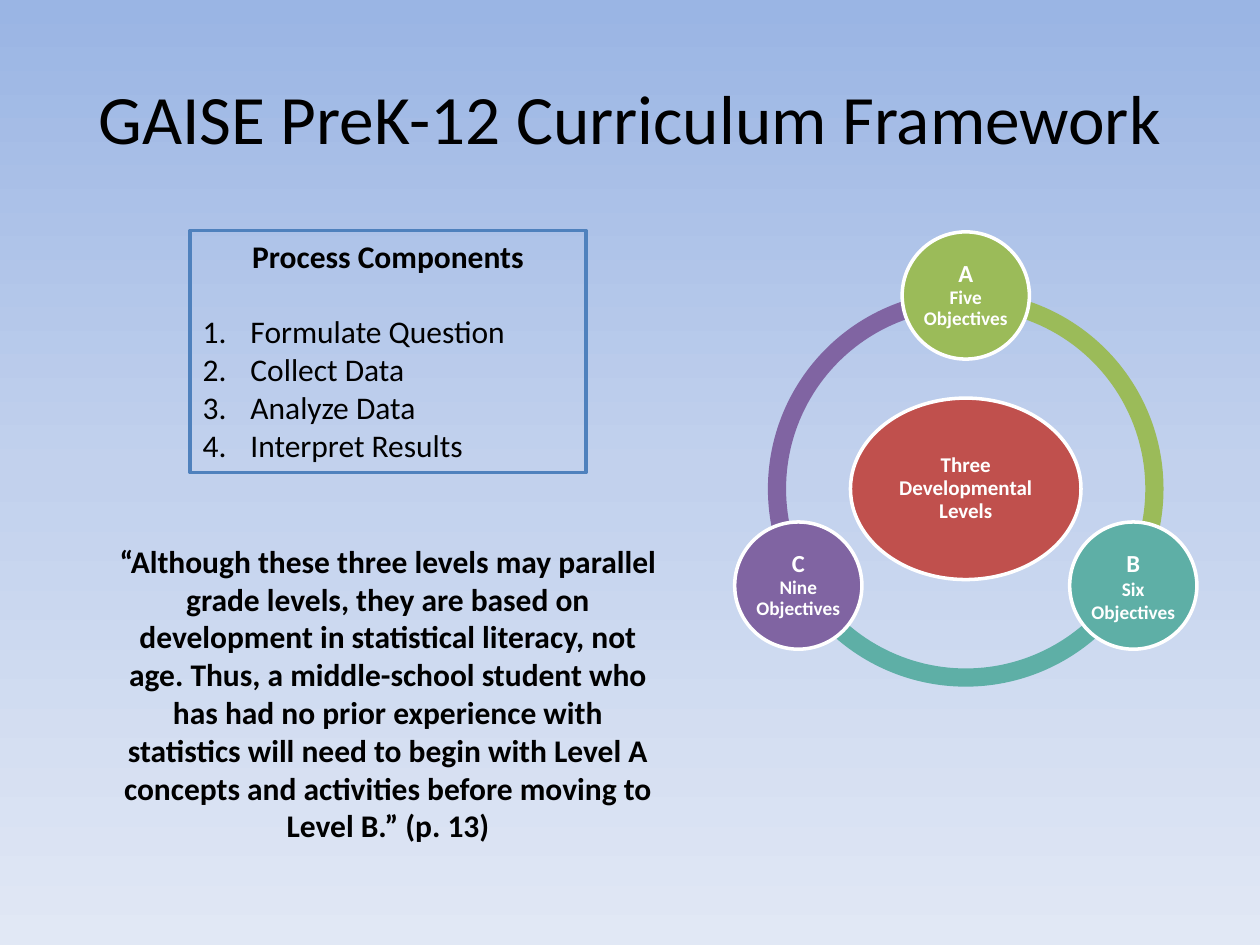
from copy import deepcopy
from math import cos, radians, sin

from lxml import etree
from pptx import Presentation
from pptx.dml.color import RGBColor
from pptx.enum.shapes import MSO_SHAPE
from pptx.enum.text import MSO_ANCHOR, PP_ALIGN
from pptx.oxml.ns import qn
from pptx.util import Inches, Pt

RECT, OVAL, ARC = MSO_SHAPE.RECTANGLE, MSO_SHAPE.OVAL, MSO_SHAPE.BLOCK_ARC
CENTER, LEFT = PP_ALIGN.CENTER, PP_ALIGN.LEFT
TOP, MIDDLE = MSO_ANCHOR.TOP, MSO_ANCHOR.MIDDLE

BLACK, WHITE, BLUE, RED = "000000", "FFFFFF", "4F81BD", "C0504D"
BACKGROUND = [(0, "9AB5E4"), (0.5, "C2D1ED"), (1, "E1E8F5")]
LEVELS = [
    ("A", "Five Objectives", "9BBB59", -90, 0.9),
    ("B", "Six Objectives", "5EAFA6", 30, 1),
    ("C", "Nine Objectives", "8064A2", 150, 0.9),
]
STEPS = ["Formulate Question", "Collect Data", "Analyze Data", "Interpret Results"]
QUOTE = (
    "“Although these three levels may parallel grade levels, they are based on "
    "development in statistical literacy, not age. Thus, a middle-school student "
    "who has had no prior experience with statistics will need to begin with "
    "Level A concepts and activities before moving to Level B.” (p. 13)"
)


def rgb(value):
    return RGBColor.from_string(value)


class Deck:
    font = "Calibri"
    columns, rows = 100, 75

    def __init__(self, prs):
        self.prs = prs
        self.s = prs.slides.add_slide(prs.slide_layouts[5])

    def box(self, x, y, w, h):
        col = self.prs.slide_width / self.columns
        row = self.prs.slide_height / self.rows
        return [round(n) for n in (x * col, y * row, w * col, h * row)]

    def background(self, stops):
        fill = self.s.background.fill
        fill.gradient()
        fill.gradient_angle = 270
        stop_list = self.s.element.find(".//" + qn("a:gsLst"))
        stop_list.insert(1, deepcopy(stop_list[0]))
        for stop, (position, color) in zip(fill.gradient_stops, stops):
            stop.position = position
            stop.color.rgb = rgb(color)

    def title(self, text, place, size):
        sp = self.s.shapes.title
        sp.left, sp.top, sp.width, sp.height = self.box(*place)
        sp.text_frame.vertical_anchor = MIDDLE
        self.paragraph(sp, text, size)

    def shape(self, kind, place, fill=None, line=None):
        sp = self.s.shapes.add_shape(kind, *self.box(*place))
        sp.shadow.inherit = False
        if fill:
            sp.fill.solid()
            sp.fill.fore_color.rgb = rgb(fill)
        else:
            sp.fill.background()
        if line:
            sp.line.color.rgb = rgb(line)
            sp.line.width = Pt(2)
        else:
            sp.line.fill.background()
        sp.text_frame.vertical_anchor = TOP
        return sp

    def arc(self, place, start, end, color):
        sp = self.shape(ARC, place, color)
        for i, value in enumerate((start % 360 * 0.6, end % 360 * 0.6, 0.046)):
            sp.adjustments[i] = value

    def circle(self, x, y, w, h, color):
        sp = self.shape(OVAL, (x - w / 2, y - h / 2, w, h), color, WHITE)
        tf = sp.text_frame
        tf.vertical_anchor = MIDDLE
        tf.margin_left = tf.margin_right = 0
        tf.margin_top = tf.margin_bottom = Inches(0.02)
        return sp

    def text_box(self, place):
        sp = self.s.shapes.add_textbox(*self.box(*place))
        sp.text_frame.word_wrap = True
        return sp

    def paragraph(self, sp, text, size, color=BLACK, bold=False, align=CENTER,
                  spacing=None, after=0):
        tf = sp.text_frame
        p = tf.add_paragraph() if tf.text else tf.paragraphs[0]
        p.alignment = align
        p.line_spacing = spacing
        p.space_after = Pt(after)
        r = p.add_run()
        r.text = text
        r.font.name, r.font.size, r.font.bold = self.font, Pt(size), bold
        r.font.color.rgb = rgb(color)
        return p

    def numbered(self, sp, text, size):
        properties = self.paragraph(sp, text, size, align=LEFT)._p.get_or_add_pPr()
        indent = Inches(0.38)
        properties.set("marL", str(indent))
        properties.set("indent", str(-indent))
        number = etree.SubElement(properties, qn("a:buAutoNum"))
        number.set("type", "arabicPeriod")


def main():
    prs = Presentation()
    prs.slide_width, prs.slide_height = Inches(10), Inches(7.5)
    deck = Deck(prs)
    deck.background(BACKGROUND)
    deck.title("GAISE PreK-12 Curriculum Framework", (5, 3, 90, 12.5), 39.6)

    center_x, center_y, orbit, ring = 76.65, 38.8, 15.35, 31.4
    ring_place = (center_x - ring / 2, center_y - ring / 2, ring, ring)
    for _, _, color, angle, _ in LEVELS:
        deck.arc(ring_place, angle, angle + 120, color)

    hub = deck.circle(center_x, center_y, 18.3, 14.4, RED)
    deck.paragraph(hub, "Three Developmental Levels", 12, WHITE, True, spacing=0.9)

    for letter, objectives, color, angle, spacing in LEVELS:
        x = center_x + orbit * cos(radians(angle))
        y = center_y + orbit * sin(radians(angle))
        level = deck.circle(x, y, 10.1, 10.1, color)
        deck.paragraph(level, letter, 14, WHITE, True, spacing=spacing)
        deck.paragraph(level, objectives, 11, WHITE, True, spacing=spacing)

    process = deck.shape(RECT, (15.1, 18.3, 31.4, 19.2), line=BLUE)
    deck.paragraph(process, "Process Components", 18, bold=True, after=21.6)
    for step in STEPS:
        deck.numbered(process, step, 18)

    quote = deck.text_box((8.3, 42.5, 45, 25.2))
    deck.paragraph(quote, QUOTE, 18, bold=True)

    prs.save("out.pptx")


if __name__ == "__main__":
    main()
